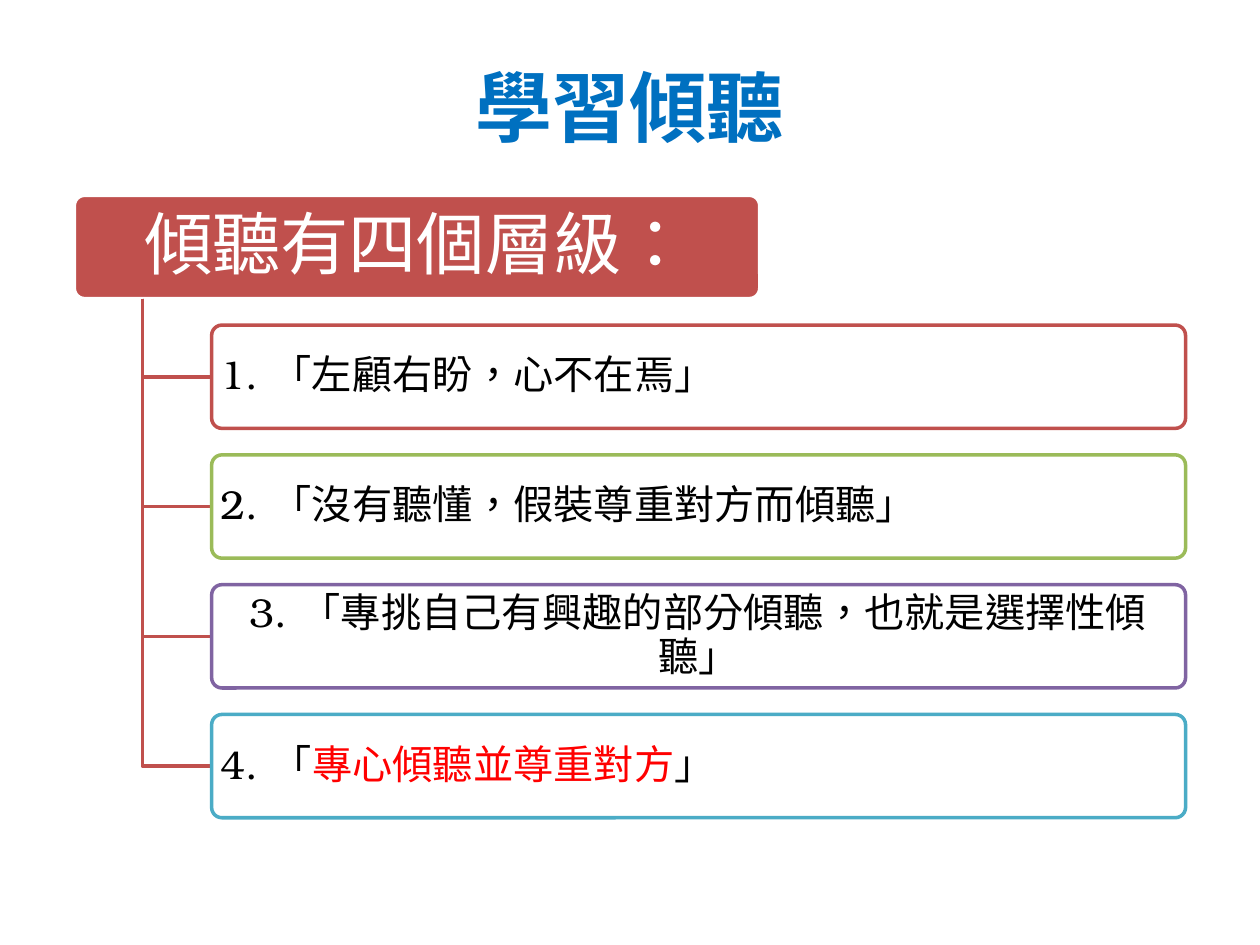
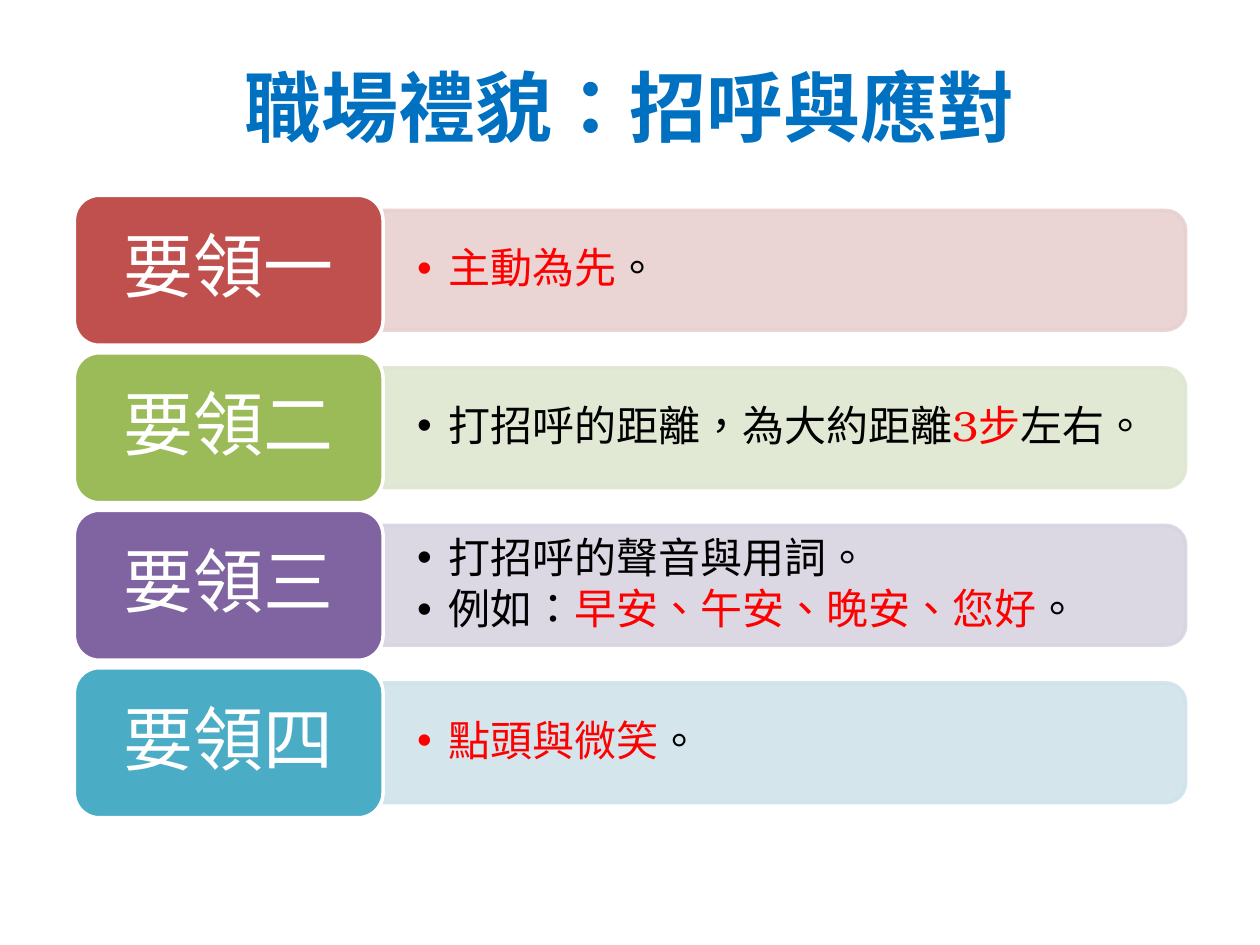
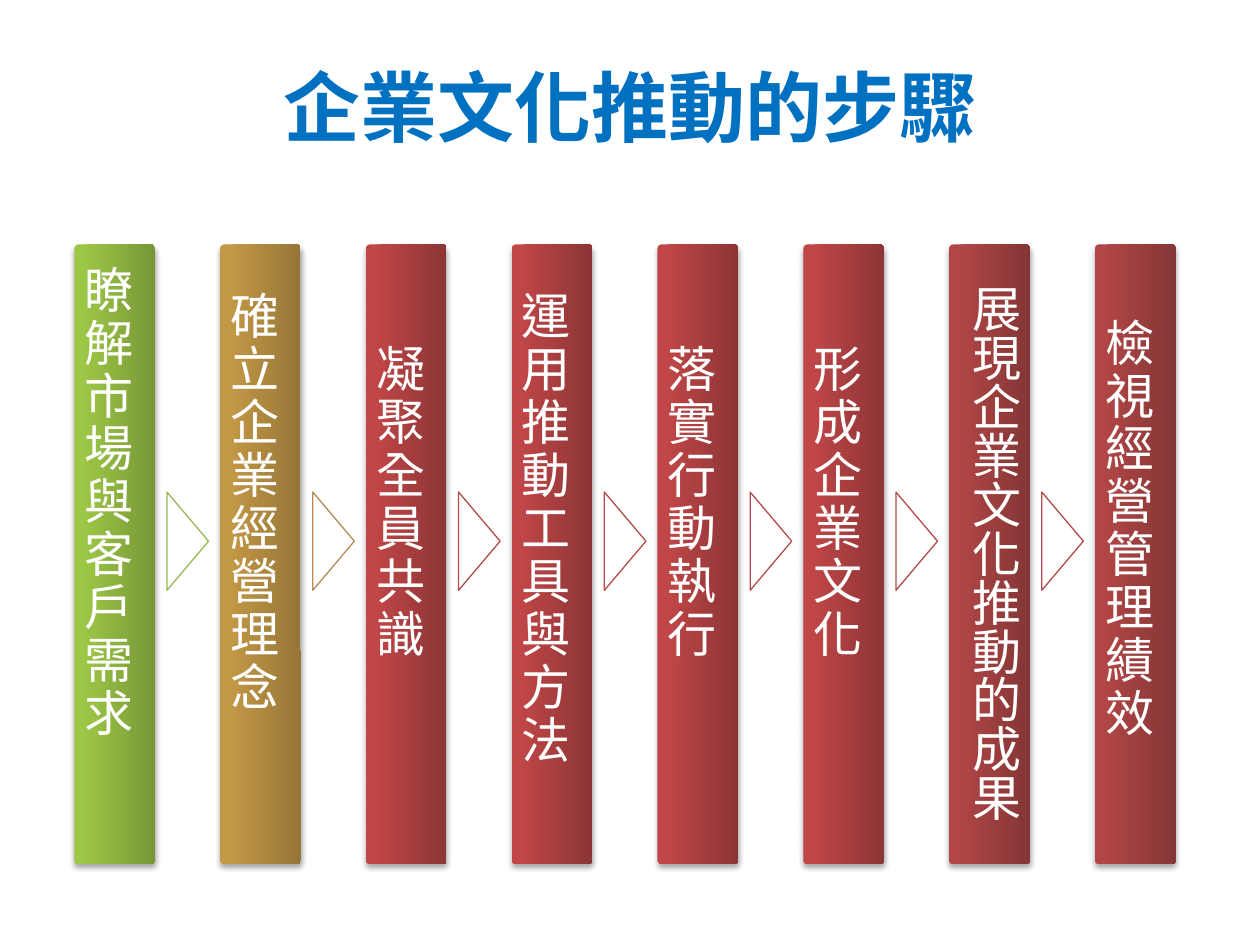
from dataclasses import dataclass

from lxml.etree import SubElement
from pptx import Presentation
from pptx.dml.color import RGBColor
from pptx.enum.lang import MSO_LANGUAGE_ID
from pptx.enum.shapes import MSO_SHAPE
from pptx.enum.text import MSO_ANCHOR, PP_ALIGN
from pptx.oxml.ns import qn
from pptx.util import Inches, Pt


@dataclass(frozen=True)
class Theme:
    font: str = "TeX Gyre Bonum"
    title: str = "0070C0"
    text: str = "000000"
    inverse: str = "FFFFFF"
    highlight: str = "FF0000"
    accents: tuple = ("C0504D", "9BBB59", "8064A2", "4BACC6")
    tints: tuple = ("E8D0D0", "DEE7D1", "D8D3E0", "D0E3EA")
    title_size: int = 44
    label_size: int = 40
    heading_size: int = 39
    step_size: int = 28
    point_size: int = 24
    card_size: int = 23
    line_width: int = 2
    tight: float = 0.9
    wide_gap: float = 0.35
    small_gap: float = 0.15


class Deck:
    def __init__(self, theme):
        self.theme = theme
        self.presentation = Presentation()
        self.presentation.slide_width = Inches(10)
        self.presentation.slide_height = Inches(7.5)
        self.slide = None

    def new_slide(self, title):
        self.slide = self.presentation.slides.add_slide(self.presentation.slide_layouts[6])
        self.text_box((0.5, 0.21, 9, 1.25), [title], self.theme.title_size, self.theme.title,
                      PP_ALIGN.CENTER, (0.1, 0.05, 0.1, 0.05), bold=True, spacing=1, gap=0)

    def shape(self, kind, box, fill, line=None, width=None, adjustment=None, rotation=0):
        shape = self.slide.shapes.add_shape(kind, *map(Inches, box))
        shape.shadow.inherit = False
        shape.rotation = rotation
        shape.fill.solid()
        shape.fill.fore_color.rgb = RGBColor.from_string(fill)
        if line:
            self.outline(shape, line, width)
        else:
            shape.line.fill.background()
        if adjustment is not None:
            shape.adjustments[0] = adjustment
        return shape

    def outline(self, shape, color, width=None):
        shape.line.color.rgb = RGBColor.from_string(color)
        shape.line.width = Pt(width or self.theme.line_width)

    def bracket(self, left, top, right, bottom, color):
        """Draw an open line down from the heading and right to a card."""
        builder = self.slide.shapes.build_freeform(Inches(left), Inches(top))
        builder.add_line_segments(
            [(Inches(left), Inches(bottom)), (Inches(right), Inches(bottom))], close=False)
        shape = builder.convert_to_shape()
        shape.shadow.inherit = False
        shape.fill.background()
        self.outline(shape, color)

    def text_box(self, box, *text_options, **more_options):
        shape = self.slide.shapes.add_textbox(*map(Inches, box))
        self.add_text(shape, *text_options, **more_options)
        return shape

    def add_text(self, shape, lines, size, color, align, margins, bold=False, bullet=False,
                 spacing=None, gap=None, anchor=MSO_ANCHOR.MIDDLE):
        """Fill a shape with lines; parts between asterisks are highlighted."""
        frame = shape.text_frame
        frame.word_wrap = True
        frame.vertical_anchor = anchor
        (frame.margin_left, frame.margin_top,
         frame.margin_right, frame.margin_bottom) = map(Inches, margins)
        for index, line in enumerate(lines):
            paragraph = frame.add_paragraph() if index else frame.paragraphs[0]
            if bullet:
                self.add_bullet(paragraph)
            paragraph.alignment = align
            paragraph.line_spacing = spacing or self.theme.tight
            paragraph.space_after = Pt(size * (self.theme.wide_gap if gap is None else gap))
            for position, part in enumerate(line.split("*")):
                if part:
                    run = paragraph.add_run()
                    run.text = part
                    self.format_run(run, size, self.theme.highlight if position % 2 else color, bold)

    def add_bullet(self, paragraph):
        properties = paragraph._p.get_or_add_pPr()
        properties.set("marL", str(Inches(0.25)))
        properties.set("indent", str(Inches(-0.25)))
        SubElement(properties, qn("a:buFont"), typeface="Arial")
        SubElement(properties, qn("a:buChar"), char="•")

    def format_run(self, run, size, color, bold):
        run.font.size = Pt(size)
        run.font.bold = bold
        run.font.color.rgb = RGBColor.from_string(color)
        run.font.name = self.theme.font
        run.font.language_id = MSO_LANGUAGE_ID.TRADITIONAL_CHINESE
        SubElement(run._r.get_or_add_rPr(), qn("a:ea"), typeface=self.theme.font)

    def make_translucent(self, shape, percent):
        for color in shape._element.spPr.iter(qn("a:srgbClr")):
            SubElement(color, qn("a:alpha"), val=str(percent * 1000))

    def shade(self, shape, light, dark):
        """Give a shape a gradient from left to right."""
        shape.fill.gradient()
        shape.fill.gradient_angle = 0
        for stop, color, position in zip(shape.fill.gradient_stops, (light, dark), (0.1, 1)):
            stop.color.rgb = RGBColor.from_string(color)
            stop.position = position

    def drop_shadow(self, shape):
        effects = shape._element.spPr.find(qn("a:effectLst"))
        shadow = SubElement(effects, qn("a:outerShdw"), blurRad=str(Pt(3.1)), dist=str(Pt(1.8)),
                            dir="5400000", rotWithShape="0")
        color = SubElement(shadow, qn("a:srgbClr"), val="000000")
        SubElement(color, qn("a:alpha"), val="35000")


def add_listening_slide(deck):
    theme = deck.theme
    deck.new_slide("學習傾聽")
    heading = deck.shape(MSO_SHAPE.ROUNDED_RECTANGLE, (0.59, 1.55, 5.44, 0.82),
                         theme.accents[0], theme.inverse, adjustment=0.1)
    deck.add_text(heading, ["傾聽有四個層級："], theme.heading_size, theme.inverse,
                  PP_ALIGN.CENTER, (0.08, 0.05, 0.08, 0.05))
    levels = [
        ("1. 「左顧右盼，心不在焉」", PP_ALIGN.LEFT),
        ("2. 「沒有聽懂，假裝尊重對方而傾聽」", PP_ALIGN.LEFT),
        ("3. 「專挑自己有興趣的部分傾聽，也就是選擇性傾聽」", PP_ALIGN.CENTER),
        ("4. 「*專心傾聽並尊重對方*」", PP_ALIGN.LEFT),
    ]
    card_left, card_height, pitch = 1.68, 0.82, 1.03
    for index, ((text, align), accent) in enumerate(zip(levels, theme.accents)):
        top = 2.58 + index * pitch
        deck.bracket(1.13, 2.37, card_left, top + card_height / 2, theme.accents[0])
        card = deck.shape(MSO_SHAPE.ROUNDED_RECTANGLE, (card_left, top, 7.73, card_height),
                          theme.inverse, accent, adjustment=0.1)
        deck.add_text(card, [text], theme.card_size, theme.text, align, (0.05, 0.03, 0.05, 0.03))


def add_greeting_slide(deck):
    theme = deck.theme
    deck.new_slide("職場禮貌：招呼與應對")
    tips = [
        ("要領一", ["*主動為先*。"]),
        ("要領二", ["打招呼的距離，為大約距離*3步*左右。"]),
        ("要領三", ["打招呼的聲音與用詞。", "例如：*早安、午安、晚安、您好*。"]),
        ("要領四", ["*點頭與微笑*。"]),
    ]
    panel_left, panel_length, panel_height = 3.04, 6.37, 0.95
    label_height, pitch = 1.19, 1.25
    for index, (label, points) in enumerate(tips):
        top = 1.55 + index * pitch
        middle = top + label_height / 2
        panel_box = (panel_left + (panel_length - panel_height) / 2, middle - panel_length / 2,
                     panel_height, panel_length)
        panel = deck.shape(MSO_SHAPE.ROUND_2_SAME_RECTANGLE, panel_box, theme.tints[index],
                           theme.tints[index], rotation=90)
        deck.make_translucent(panel, 90)
        deck.text_box((panel_left, middle - 0.43, 6.32, 0.86), points, theme.point_size,
                      theme.text, PP_ALIGN.LEFT, (0.27, 0.14, 0.27, 0.14),
                      bullet=True, gap=theme.small_gap)
        tab = deck.shape(MSO_SHAPE.ROUNDED_RECTANGLE, (0.59, top, 2.45, label_height),
                         theme.accents[index], theme.inverse)
        deck.add_text(tab, [label], theme.label_size, theme.inverse, PP_ALIGN.CENTER,
                      (0.17, 0.08, 0.17, 0.08))


def add_culture_slide(deck):
    theme = deck.theme
    deck.new_slide("企業文化推動的步驟")
    green = ("9DC746", "779737", "98B955")
    gold = ("C49946", "957538", "B68A54")
    red = ("C14647", "8C3536", "B44A4A")
    soft_red = ("B24646", "843636", "B44A4A")
    # Each step: text, extra space above it, colours of bar and arrow
    steps = [
        ("瞭解市場與客戶需求", 0, green),
        ("確立企業經營理念", 0, gold),
        ("凝聚全員共識", 0, red),
        ("運用推動工具與方法", 0.42, red),
        ("落實行動執行", 0, red),
        ("形成企業文化", 0, red),
        ("展現企業文化推動的成果", 0, soft_red),
        ("檢視經營管理績效", 0.42, soft_red),
    ]
    first_left, last_left, bar_top = 0.59, 8.69, 1.94
    pitch = (last_left - first_left) / (len(steps) - 1)
    for index, (text, extra, (light, dark, edge)) in enumerate(steps):
        left = first_left + index * pitch
        bar = deck.shape(MSO_SHAPE.ROUNDED_RECTANGLE, (left, bar_top, 0.64, 4.92), light,
                         adjustment=0.05)
        deck.shade(bar, light, dark)
        deck.drop_shadow(bar)
        if index == 6:
            column = deck.text_box((left - 0.02, 2.16, 0.67, 4.57), [text], theme.step_size,
                                   theme.inverse, PP_ALIGN.LEFT, (0.1, 0.05, 0.1, 0.05),
                                   spacing=1, gap=0, anchor=MSO_ANCHOR.TOP)
            column.text_frame._txBody.bodyPr.set("vert", "eaVert")
        else:
            deck.add_text(bar, [text], theme.step_size, theme.inverse, PP_ALIGN.CENTER,
                          (0.04, 0.09 + extra, 0.13, 0.89))
        if index < len(steps) - 1:
            deck.shape(MSO_SHAPE.FLOWCHART_EXTRACT, (left + 0.51, 4.13, 0.78, 0.33),
                       theme.inverse, edge, 0.75, rotation=90)


def main():
    deck = Deck(Theme())
    add_listening_slide(deck)
    add_greeting_slide(deck)
    add_culture_slide(deck)
    deck.presentation.save("out.pptx")


if __name__ == "__main__":
    main()
